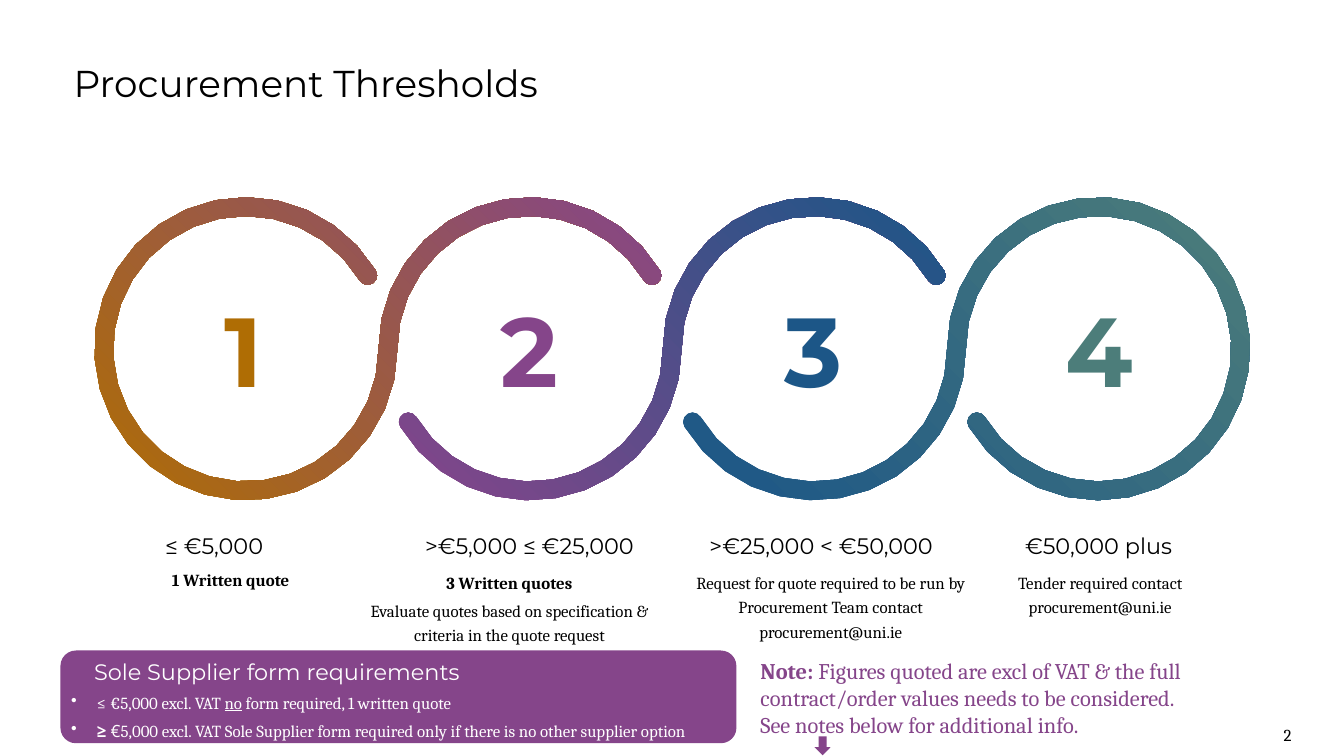
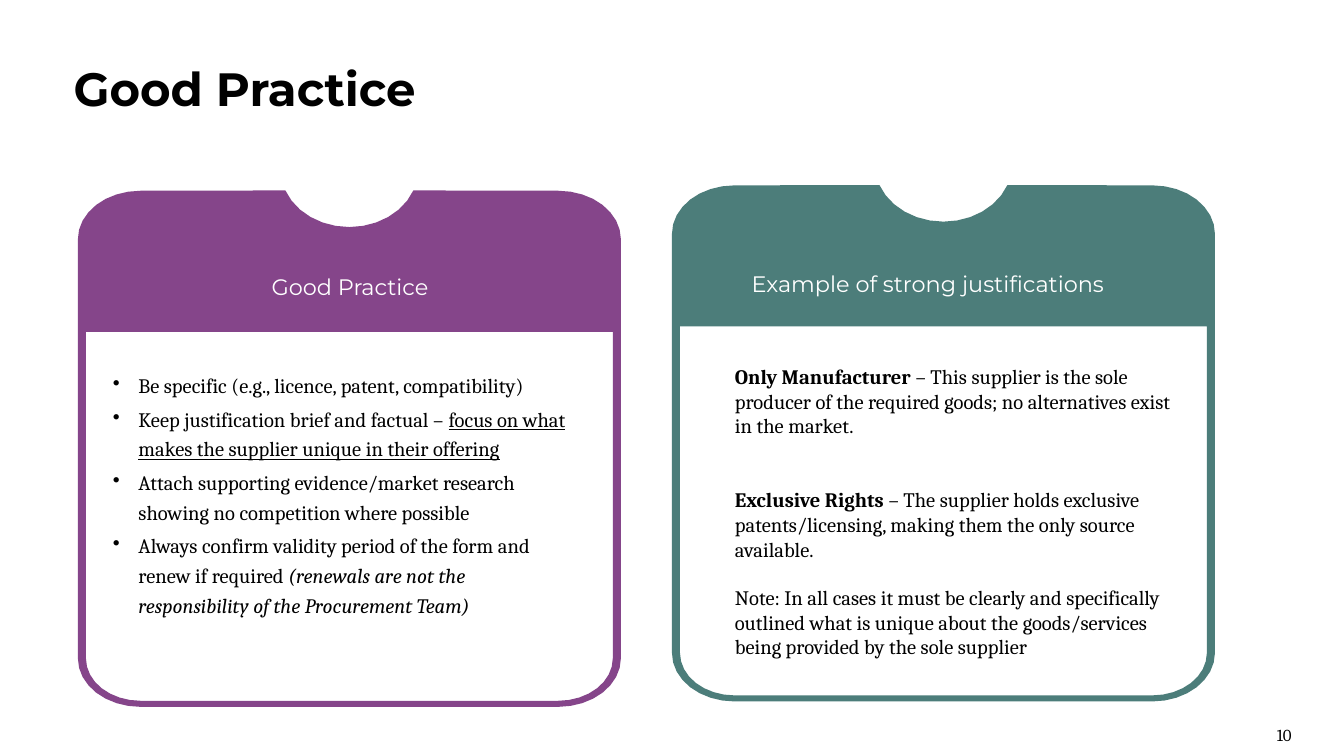
import math

from lxml import etree
from pptx import Presentation
from pptx.dml.color import RGBColor
from pptx.enum.shapes import MSO_SHAPE
from pptx.enum.text import MSO_ANCHOR, MSO_AUTO_SIZE, PP_ALIGN
from pptx.oxml.ns import qn
from pptx.util import Pt

PX = 4572
LEFT, CENTER, RIGHT = PP_ALIGN.LEFT, PP_ALIGN.CENTER, PP_ALIGN.RIGHT
TOP, MIDDLE, BOTTOM = MSO_ANCHOR.TOP, MSO_ANCHOR.MIDDLE, MSO_ANCHOR.BOTTOM
GROW, FIXED = MSO_AUTO_SIZE.SHAPE_TO_FIT_TEXT, MSO_AUTO_SIZE.NONE
ROUNDED, ARROW = MSO_SHAPE.ROUNDED_RECTANGLE, MSO_SHAPE.RIGHT_ARROW
HEADING, BODY, SYMBOL = "Montserrat", "Cambria", "Open Sans"
COLORS = {
    "black": "000000",
    "white": "FFFFFF",
    "amber": "AF6D04",
    "purple": "85458A",
    "blue": "1C5687",
    "teal": "4C7D7A",
}
NO_INSETS = (0, 0, 0, 0)
TIGHT = (8, 4, 8, 4)


def arc(center_x, center_y, radius_x, radius_y, start, stop, step=12):
    count = math.ceil(abs(stop - start) / step)
    angles = [math.radians(start + (stop - start) * index / count) for index in range(count + 1)]
    return [
        (round(PX * (center_x + radius_x * math.cos(angle))),
         round(PX * (center_y + radius_y * math.sin(angle))))
        for angle in angles
    ]


def add_text(slide, box, paragraphs, size, font=BODY, color="black", align=LEFT, anchor=TOP,
             insets=(20, 10, 20, 10), wrap=True, spacing=None, before=0, bullet=False):
    frame = slide.shapes.add_textbox(*[PX * length for length in box]).text_frame
    frame.word_wrap = wrap
    frame.auto_size = GROW
    frame.vertical_anchor = anchor
    frame.margin_left, frame.margin_top, frame.margin_right, frame.margin_bottom = [
        PX * inset for inset in insets
    ]
    for index, runs in enumerate(paragraphs):
        paragraph = frame.add_paragraph() if index else frame.paragraphs[0]
        if bullet:
            properties = paragraph._p.get_or_add_pPr()
            properties.set("marL", str(38 * PX))
            properties.set("indent", str(-38 * PX))
            etree.SubElement(properties, qn("a:buChar")).set("char", "•")
        paragraph.alignment = align
        paragraph.line_spacing = spacing
        paragraph.space_before = Pt(before)
        paragraph.font.size = Pt(size)
        paragraph.font.name = font
        paragraph.font.color.rgb = RGBColor.from_string(COLORS[color])
        for content, style in runs:
            run = paragraph.add_run()
            run.text = content
            if "b" in style:
                run.font.bold = True
            if "i" in style:
                run.font.italic = True
            if "u" in style:
                run.font.underline = True
    return frame


presentation = Presentation()
presentation.slide_width = 2000 * PX
presentation.slide_height = 1125 * PX

slides = []
for title, title_size, title_style, title_width, number in [
    ("Procurement Thresholds", 20, "", 1826, "2"),
    ("Good Practice", 25, "b", 1500, "10"),
]:
    slide = presentation.slides.add_slide(presentation.slide_layouts[6])
    slides.append(slide)
    add_text(slide, (1872, 1078, 50, 30), [[(number, "")]], 9, align=RIGHT, anchor=MIDDLE,
             insets=NO_INSETS)
    title_frame = add_text(slide, (90, 80, title_width, 192), [[(title, title_style)]],
                           title_size, HEADING)
    title_frame.auto_size = FIXED

thresholds, practice = slides

RING_X, RING_Y, RING_PITCH, HALF_BAND = 366, 519, 423, 14
RING_RADIUS = RING_PITCH / 2
for first_ring, first_start, first_stop, last_stop, start_color, end_color in [
    (0, -31, -360, 329, "amber", "purple"),
    (1, 149, 0, 329, "purple", "blue"),
    (2, 149, 0, 509, "blue", "teal"),
]:
    first_x = RING_X + first_ring * RING_PITCH
    last_x = first_x + RING_PITCH
    sides = []
    for offset in (HALF_BAND, -HALF_BAND):
        wide, narrow = RING_RADIUS + offset, RING_RADIUS - offset
        sides.append(arc(first_x, RING_Y, wide, wide, first_start, first_stop)
                     + arc(last_x, RING_Y, narrow, narrow, 180, last_stop)[1:])
    caps = []
    for center_x, angle in [(first_x, first_start), (last_x, last_stop)]:
        tip_x = center_x + RING_RADIUS * math.cos(math.radians(angle))
        tip_y = RING_Y + RING_RADIUS * math.sin(math.radians(angle))
        caps.append(arc(tip_x, tip_y, HALF_BAND, HALF_BAND, angle + 180, angle, 30)[1:-1])
    outline = sides[0] + caps[1] + sides[1][::-1] + caps[0]
    builder = thresholds.shapes.build_freeform(*outline[0])
    builder.add_line_segments(outline[1:], close=True)
    band = builder.convert_to_shape()
    band.shadow.inherit = False
    band.line.fill.background()
    band.fill.gradient()
    band.fill.gradient_angle = 45
    for stop, position, color in zip(band.fill.gradient_stops, (0, 1), (start_color, end_color)):
        stop.position = position
        stop.color.rgb = RGBColor.from_string(COLORS[color])

for index, (color, heading, heading_box, heading_align, details, details_box) in enumerate([
    ("amber", "≤ €5,000", (226, 782, 198, 60), LEFT,
     [("1 Written quote", "b")], (154, 838, 378, 40)),
    ("purple", ">€5,000 ≤ €25,000", (600, 782, 376, 60), CENTER,
     [("3 Written quotes", "b"),
      ("Evaluate quotes based on specification & criteria in the quote request", "")],
     (532, 842, 452, 120)),
    ("blue", ">€25,000 < €50,000", (1036, 782, 398, 60), LEFT,
     [("Request for quote required to be run by Procurement Team contact procurement@uni.ie", "")],
     (1024, 842, 424, 114)),
    ("teal", "€50,000 plus", (1498, 782, 274, 60), CENTER,
     [("Tender required contact procurement@uni.ie", "")], (1448, 842, 378, 78)),
]):
    add_text(thresholds, details_box, [[detail] for detail in details], 9, align=CENTER,
             insets=TIGHT, spacing=Pt(13.1), before=1.8)
    add_text(thresholds, heading_box, [[(heading, "")]], 12, HEADING, align=heading_align,
             anchor=BOTTOM, wrap=False)
    add_text(thresholds, (294 + index * 424, 420, 138, 196), [[(str(index + 1), "b")]], 52.5,
             HEADING, color, CENTER, MIDDLE, wrap=False)

for kind, box, rotation in [
    (ROUNDED, (90, 968, 1006, 138), 0),
    (ARROW, (1210, 1098, 28, 24), 90),
]:
    shape = thresholds.shapes.add_shape(kind, *[PX * length for length in box])
    shape.rotation = rotation
    shape.shadow.inherit = False
    shape.fill.solid()
    shape.fill.fore_color.rgb = RGBColor.from_string(COLORS["purple"])
    shape.line.fill.background()

add_text(thresholds, (140, 970, 618, 60), [[("Sole Supplier form requirements", "")]], 12,
         HEADING, "white", anchor=BOTTOM, insets=(0, 10, 20, 10), wrap=False)
supplier_rules = add_text(
    thresholds, (106, 1020, 1024, 84),
    [
        [("≤ €5,000 excl. VAT ", ""), ("no", "u"), (" form required, 1 written quote", "")],
        [("≥ ", "b"), ("€", ""),
         ("5,000 excl. VAT Sole Supplier form required only if there is no other supplier option",
          "")],
    ],
    9, color="white", insets=(0, 4, 8, 4), spacing=Pt(13.1), before=1.8, bullet=True)
for run in supplier_rules.paragraphs[1].runs[:2]:
    run.font.name = SYMBOL
add_text(
    thresholds, (1112, 968, 778, 142),
    [
        [("Note: ", "b"),
         ("Figures quoted are excl of VAT & the full contract/order values needs to be considered.",
          "")],
        [("See notes below for additional info.", "")],
    ],
    12, color="purple")

BADGE_WIDTH, BADGE_HEIGHT, CORNER_X, CORNER_Y = 808, 768, 93, 72
WINDOW_TOP, SIDE_BORDER, BOTTOM_BORDER = 210, 12, 9
for left, top, color, heading, heading_box in [
    (116, 284, "purple", "Good Practice", (370, 396, 302, 60)),
    (1000, 276, "teal", "Example of strong justifications", (1056, 392, 650, 60)),
]:
    near_x, far_x = left + CORNER_X, left + BADGE_WIDTH - CORNER_X
    near_y, far_y = top + CORNER_Y, top + BADGE_HEIGHT - CORNER_Y
    outline = arc(left + BADGE_WIDTH / 2, top - 31, 102, 85, 159, 21)
    for center_x, center_y, start in [
        (far_x, near_y, 270), (far_x, far_y, 0), (near_x, far_y, 90), (near_x, near_y, 180),
    ]:
        outline += arc(center_x, center_y, CORNER_X, CORNER_Y, start, start + 90)
    window_x, window_y = CORNER_X - SIDE_BORDER, CORNER_Y - BOTTOM_BORDER
    window = [(PX * x, PX * (top + WINDOW_TOP))
              for x in (left + SIDE_BORDER, left + BADGE_WIDTH - SIDE_BORDER)]
    window += arc(far_x, far_y, window_x, window_y, 0, 90)
    window += arc(near_x, far_y, window_x, window_y, 90, 180)
    builder = practice.shapes.build_freeform(*outline[0])
    builder.add_line_segments(outline[1:], close=True)
    builder.move_to(*window[0])
    builder.add_line_segments(window[1:], close=True)
    badge = builder.convert_to_shape()
    badge.shadow.inherit = False
    badge.fill.solid()
    badge.fill.fore_color.rgb = RGBColor.from_string(COLORS[color])
    badge.line.fill.background()
    add_text(practice, heading_box, [[(heading, "")]], 12, HEADING, "white", CENTER, BOTTOM,
             wrap=False)

add_text(
    practice, (160, 544, 710, 424),
    [
        [("Be specific (e.g., licence, patent, compatibility)", "")],
        [("Keep justification brief and factual – ", ""),
         ("focus on what makes the supplier unique in their offering", "u")],
        [("Attach supporting evidence/market research showing no competition where possible", "")],
        [("Always confirm validity period of the form and renew if required ", ""),
         ("(renewals are not the responsibility of the Procurement Team)", "i")],
    ],
    11, insets=TIGHT, spacing=1.2, before=2.2, bullet=True)

justifications = add_text(
    practice, (1074, 532, 720, 500),
    [
        [("Only Manufacturer", "b"),
         (" – This supplier is the sole producer of the required goods; "
          "no alternatives exist in the market.", "")],
        [("Exclusive Rights", "b"),
         (" – The supplier holds exclusive patents/licensing, "
          "making them the only source available.", "")],
        [("Note: In all cases it must be clearly and specifically outlined what is unique about "
          "the goods/services being provided by the sole supplier", "")],
    ],
    11)
rights, note = justifications.paragraphs[1:]
rights.space_before = Pt(26.4)
note.space_before = Pt(13.1)
note.line_spacing = Pt(13.1)

presentation.save("out.pptx")
